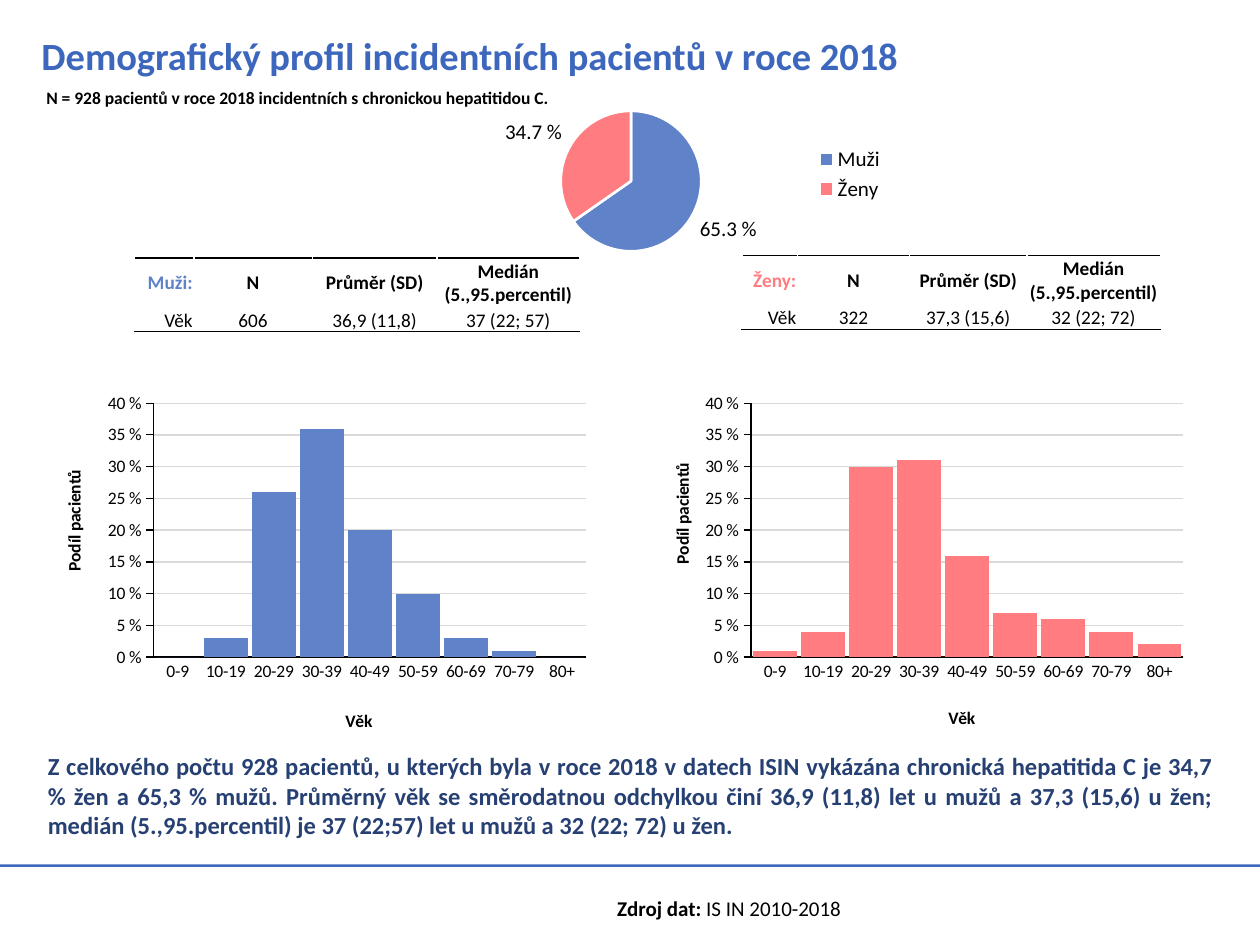
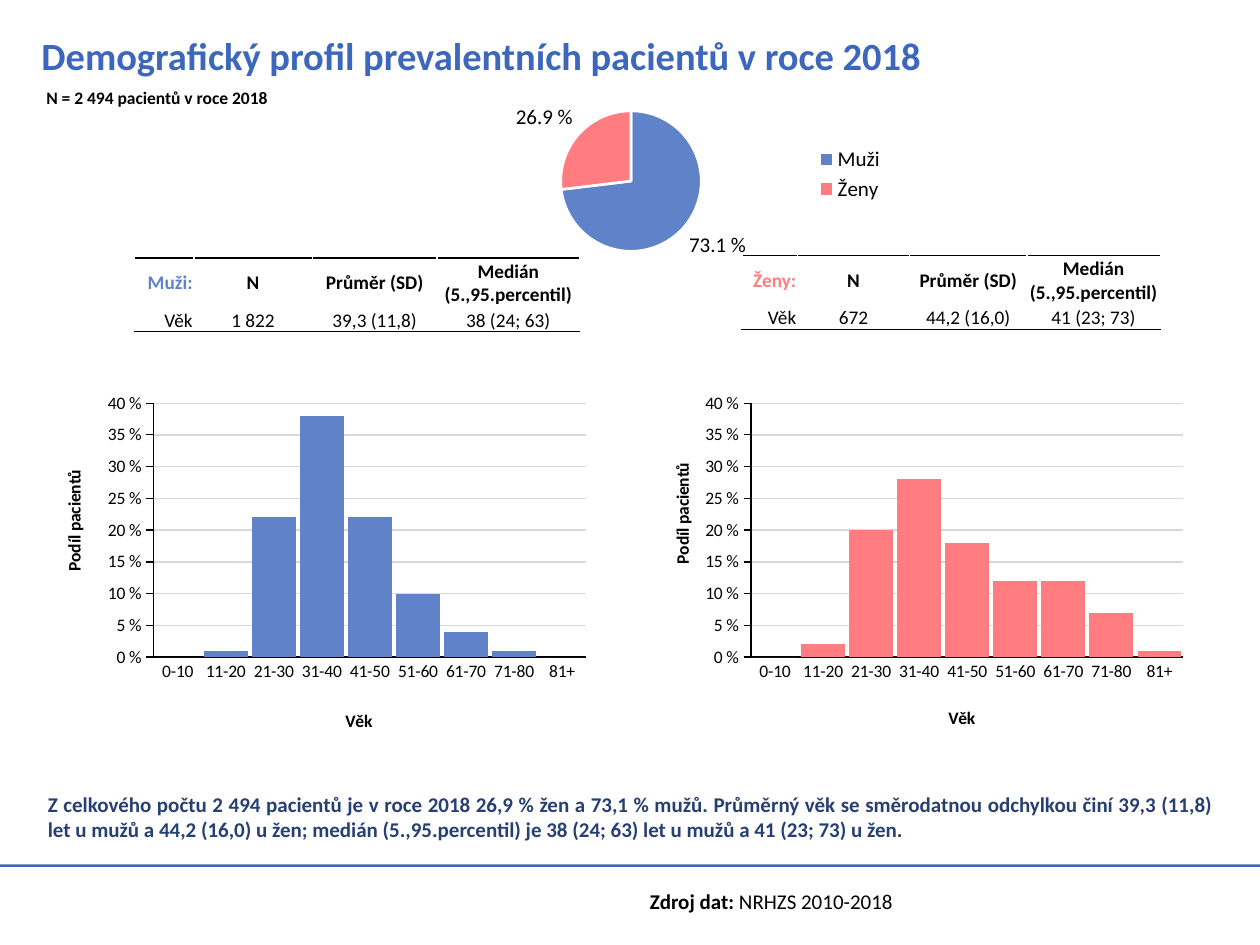
from lxml import etree
from pptx import Presentation
from pptx import util as u
from pptx.chart.data import CategoryChartData
from pptx.dml.color import RGBColor
from pptx.enum import chart as charts, shapes, text
from pptx.oxml.ns import qn

BLACK, WHITE, GRID = "000000", "FFFFFF", "D9D9D9"
ACCENT, SUMMARY, MEN, WOMEN = "3D67BC", "274073", "5F82C9", "FF7C80"
FONT = "Calibri"
LEFT, CENTER, RIGHT = text.PP_ALIGN.LEFT, text.PP_ALIGN.CENTER, text.PP_ALIGN.RIGHT
TOP, MIDDLE, BOTTOM = text.MSO_ANCHOR.TOP, text.MSO_ANCHOR.MIDDLE, text.MSO_ANCHOR.BOTTOM

TABLE_HEADINGS = ["N", "Průměr (SD)", "Medián (5.,95.percentil)"]
SEXES = [
    dict(name="Muži", color=MEN, table_at=(77, 147.4), columns=(33.8, 67.7, 71.3, 81.4),
         chart_left=24.5, age_title=(0.54, 0.91), share_title=(0.03, 0.23)),
    dict(name="Ženy", color=WOMEN, table_at=(424, 146), columns=(31.7, 64.1, 67, 76.3),
         chart_left=365.8, age_title=(0.55, 0.9), share_title=(0.05, 0.21)),
]

PROFILES = [
    dict(
        title="Demografický profil incidentních pacientů v roce 2018",
        sample="N = 928 pacientů v roce 2018 incidentních s chronickou hepatitidou C.",
        summary="Z celkového počtu 928 pacientů, u kterých byla v roce 2018 v datech ISIN "
                "vykázána chronická hepatitida C je 34,7 % žen a 65,3 % mužů. Průměrný věk se "
                "směrodatnou odchylkou činí 36,9 (11,8) let u mužů a 37,3 (15,6) u žen; medián "
                "(5.,95.percentil) je 37 (22;57) let u mužů a 32 (22; 72) u žen.",
        summary_top=434, summary_size=14,
        source="IS IN 2010-2018", source_at=(345.6, 508.3),
        shares=(65.3, 34.7),
        ages=["0-9", "10-19", "20-29", "30-39", "40-49", "50-59", "60-69", "70-79", "80+"],
        stats=[["606", "36,9 (11,8)", "37 (22; 57)"], ["322", "37,3 (15,6)", "32 (22; 72)"]],
        age_shares=[(0, 0.03, 0.26, 0.36, 0.2, 0.1, 0.03, 0.01, 0),
                    (0.01, 0.04, 0.3, 0.31, 0.16, 0.07, 0.06, 0.04, 0.02)],
    ),
    dict(
        title="Demografický profil prevalentních pacientů v roce 2018",
        sample="N = 2 494 pacientů v roce 2018",
        summary="Z celkového počtu 2 494 pacientů je v roce 2018 26,9 % žen a 73,1 % mužů. "
                "Průměrný věk se směrodatnou odchylkou činí 39,3 (11,8) let u mužů a 44,2 (16,0) "
                "u žen; medián (5.,95.percentil) je 38 (24; 63) let u mužů a 41 (23; 73) u žen.",
        summary_top=446.4, summary_size=12,
        source="NRHZS 2010-2018", source_at=(364.3, 504),
        shares=(73.1, 26.9),
        ages=["0-10", "11-20", "21-30", "31-40", "41-50", "51-60", "61-70", "71-80", "81+"],
        stats=[["1 822", "39,3 (11,8)", "38 (24; 63)"], ["672", "44,2 (16,0)", "41 (23; 73)"]],
        age_shares=[(0, 0.01, 0.22, 0.38, 0.22, 0.1, 0.04, 0.01, 0),
                    (0, 0.02, 0.2, 0.28, 0.18, 0.12, 0.12, 0.07, 0.01)],
    ),
]


def rgb(color):
    return RGBColor.from_string(color)


def points(*lengths):
    return [u.Pt(length) for length in lengths]


def set_font(font, size, color=BLACK, bold=False):
    font.name, font.size, font.bold = FONT, u.Pt(size), bold
    font.color.rgb = rgb(color)


def write(frame, words, size=12, color=BLACK, bold=False, align=LEFT, anchor=TOP):
    frame.word_wrap = True
    frame.vertical_anchor = anchor
    paragraph = frame.paragraphs[0]
    paragraph.alignment = align
    run = paragraph.add_run()
    run.text = words
    set_font(run.font, size, color, bold)


def add_text(slide, at, words, **style):
    frame = slide.shapes.add_textbox(*points(*at)).text_frame
    write(frame, words, **style)
    return frame


def add_rule(slide):
    rule = slide.shapes.add_shape(shapes.MSO_SHAPE.RECTANGLE, *points(0, 493.9, 720, 1.5))
    rule.shadow.inherit = False
    rule.fill.solid()
    rule.fill.fore_color.rgb = rgb(ACCENT)
    rule.line.fill.background()


def add_border(cell, side):
    properties = cell._tc.get_or_add_tcPr()
    border = etree.Element(qn(f"a:{side}"), w=str(u.Pt(0.75)))
    fill = etree.SubElement(border, qn("a:solidFill"))
    etree.SubElement(fill, qn("a:srgbClr"), val=BLACK)
    properties.insert(0, border)


def add_stats_table(slide, sex, stats):
    rows = [[sex["name"] + ":"] + TABLE_HEADINGS, ["Věk"] + stats]
    heights = (28.3, 13.4)
    widths = sex["columns"]
    table = slide.shapes.add_table(
        2, 4, *points(*sex["table_at"], sum(widths), sum(heights))).table
    table.first_row = table.horz_banding = False
    for column, width in zip(table.columns, widths):
        column.width = u.Pt(width)
    for r, row in enumerate(rows):
        table.rows[r].height = u.Pt(heights[r])
        for c, words in enumerate(row):
            cell = table.cell(r, c)
            cell.margin_left = cell.margin_right = cell.margin_top = u.Pt(0.7)
            cell.margin_bottom = 0
            cell.fill.solid()
            cell.fill.fore_color.rgb = rgb(WHITE)
            write(cell.text_frame, words, size=11, bold=r == 0,
                  color=sex["color"] if r == c == 0 else BLACK,
                  align=CENTER if c else RIGHT)
            cell.vertical_anchor = BOTTOM if r and c else MIDDLE
            add_border(cell, "lnB" if r else "lnT")


def place(element, x, y, w=None, h=None):
    layout = element.find(qn("c:layout"))
    if layout is not None:
        element.remove(layout)
    layout = etree.Element(qn("c:layout"))
    manual = etree.SubElement(layout, qn("c:manualLayout"))
    settings = dict(layoutTarget="inner" if element.tag == qn("c:plotArea") else None,
                    xMode="edge", yMode="edge", x=x, y=y, w=w, h=h)
    for name, value in settings.items():
        if value is not None:
            etree.SubElement(manual, qn(f"c:{name}"), val=str(value))
    heads = [child for child in element if child.tag in (qn("c:tx"), qn("c:legendPos"))]
    element.insert(len(heads), layout)


def add_chart(slide, kind, at, categories, values, plot):
    data = CategoryChartData()
    data.categories = categories
    data.add_series("Series 1", values)
    chart = slide.shapes.add_chart(kind, *points(*at), data).chart
    set_font(chart.font, 10)
    chart.has_title = chart.has_legend = False
    place(chart._chartSpace.chart.plotArea, *plot)
    return chart


def add_sex_pie(slide, shares):
    chart = add_chart(slide, charts.XL_CHART_TYPE.PIE, (235.4, 50.4, 298.1, 129.6),
                      [sex["name"] for sex in SEXES], shares, (0.2, 0.1, 0.44, 0.62))
    plot = chart.plots[0]
    for index, sex in enumerate(SEXES):
        slice_format = plot.series[0].points[index].format
        slice_format.fill.solid()
        slice_format.fill.fore_color.rgb = rgb(sex["color"])
        slice_format.line.color.rgb = rgb(WHITE)
        slice_format.line.width = u.Pt(1.5)
    plot.has_data_labels = True
    labels = plot.data_labels
    labels.show_percentage, labels.show_value = True, False
    labels.number_format, labels.number_format_is_linked = "0.0\\ %", False
    labels.position = charts.XL_LABEL_POSITION.OUTSIDE_END
    set_font(labels.font, 12)
    chart.has_legend = True
    chart.legend.position = charts.XL_LEGEND_POSITION.RIGHT
    chart.legend.include_in_layout = False
    set_font(chart.legend.font, 12)
    place(chart.legend._element, 0.74, 0.24, 0.2, 0.28)


def style_axis(axis, words, title_at, tick):
    title = axis.axis_title
    write(title.text_frame, words, size=10, bold=True, align=CENTER)
    place(title._element, *title_at)
    axis.major_tick_mark = tick
    axis.minor_tick_mark = charts.XL_TICK_MARK.NONE
    axis.format.line.color.rgb = rgb(BLACK)
    axis.format.line.width = u.Pt(0.75)
    set_font(axis.tick_labels.font, 10)


def add_age_chart(slide, sex, ages, shares):
    chart = add_chart(slide, charts.XL_CHART_TYPE.COLUMN_CLUSTERED,
                      (sex["chart_left"], 220.3, 316.8, 201.6),
                      ages, shares, (0.2, 0.05, 0.78, 0.72))
    plot = chart.plots[0]
    plot.gap_width, plot.vary_by_categories = 10, False
    fill = plot.series[0].format.fill
    fill.solid()
    fill.fore_color.rgb = rgb(sex["color"])
    style_axis(chart.category_axis, "Věk", sex["age_title"], charts.XL_TICK_MARK.NONE)
    share_axis = chart.value_axis
    style_axis(share_axis, "Podíl pacientů", sex["share_title"], charts.XL_TICK_MARK.OUTSIDE)
    share_axis.axis_title.text_frame._txBody.bodyPr.set("rot", "-5400000")
    share_axis.minimum_scale, share_axis.maximum_scale = 0, 0.4
    share_axis.major_unit = 0.05
    share_axis.tick_labels.number_format = "0\\ %"
    share_axis.tick_labels.number_format_is_linked = False
    share_axis.major_gridlines.format.line.color.rgb = rgb(GRID)
    share_axis.major_gridlines.format.line.width = u.Pt(0.75)


def add_source(slide, at, source):
    frame = add_text(slide, (*at, 337, 21.6), "Zdroj dat: ", bold=True)
    run = frame.paragraphs[0].add_run()
    run.text = source
    set_font(run.font, 12)


def add_profile(slide, profile):
    add_rule(slide)
    add_text(slide, (16.6, 13.7, 697.7, 36), profile["title"],
             size=22, color=ACCENT, bold=True, anchor=MIDDLE)
    add_text(slide, (20.2, profile["summary_top"], 680.4, 41), profile["summary"],
             size=profile["summary_size"], color=SUMMARY, bold=True,
             align=text.PP_ALIGN.JUSTIFY, anchor=MIDDLE)
    add_sex_pie(slide, profile["shares"])
    for sex, stats in zip(SEXES, profile["stats"]):
        add_stats_table(slide, sex, stats)
    for sex, shares in zip(SEXES, profile["age_shares"]):
        add_age_chart(slide, sex, profile["ages"], shares)
    add_text(slide, (19.4, 46.1, 651.6, 19.4), profile["sample"], size=10, bold=True)
    add_source(slide, profile["source_at"], profile["source"])


def main():
    deck = Presentation()
    deck.slide_width, deck.slide_height = points(720, 540)
    for profile in PROFILES:
        add_profile(deck.slides.add_slide(deck.slide_layouts[6]), profile)
    deck.save("out.pptx")


if __name__ == "__main__":
    main()
